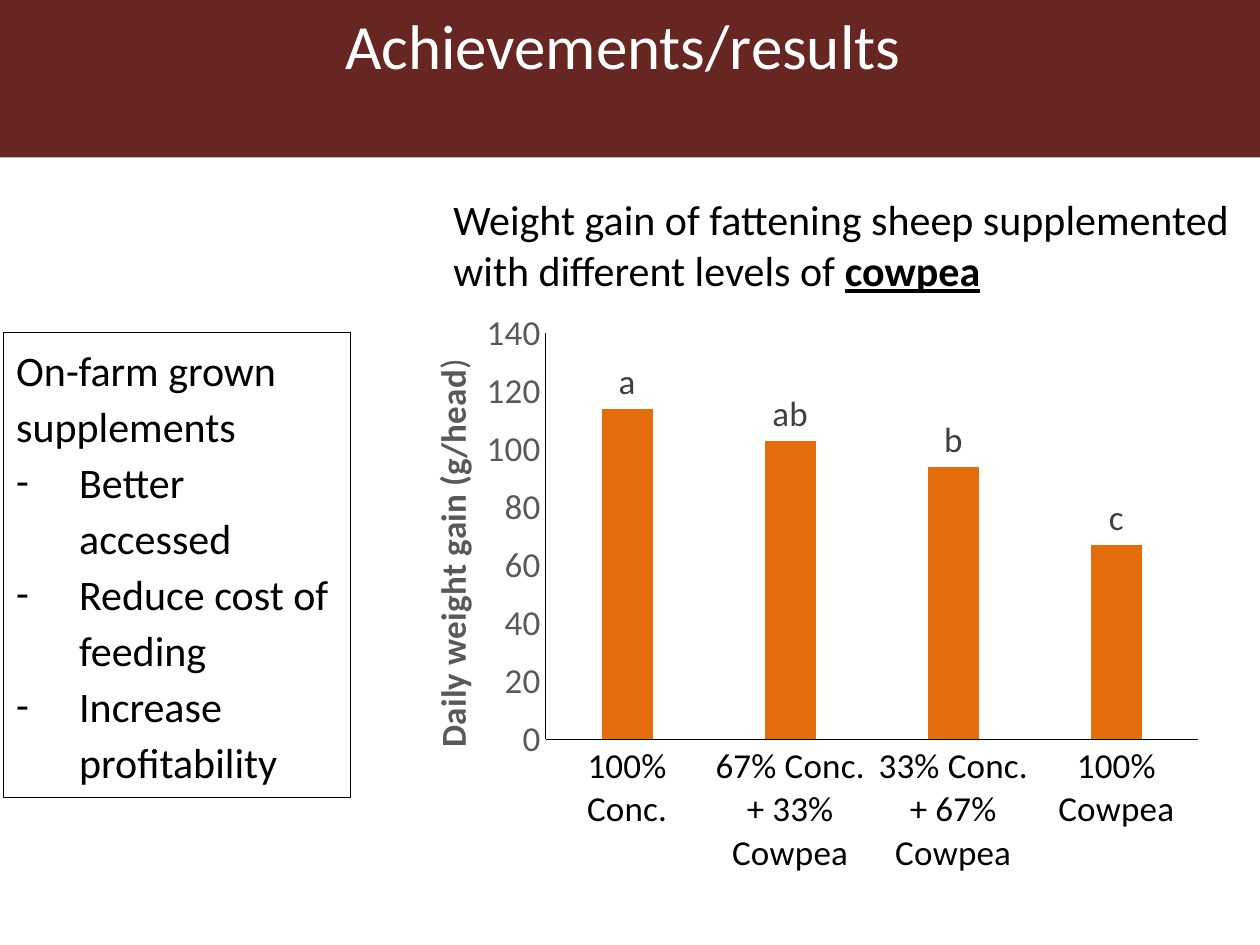
from lxml import etree
from pptx import Presentation
from pptx.chart.data import CategoryChartData as Data
from pptx.dml.color import RGBColor as RGB
from pptx.enum.chart import XL_CHART_TYPE as Kind, XL_LABEL_POSITION as Spot, XL_TICK_MARK as Tick
from pptx.enum.shapes import MSO_SHAPE as Shape
from pptx.enum.text import MSO_ANCHOR as Anchor, MSO_AUTO_SIZE as Fit, PP_ALIGN as Align
from pptx.oxml import parse_xml
from pptx.oxml.ns import nsdecls, qn
from pptx.util import Inches, Pt

MAROON = RGB(0x68, 0x26, 0x22)
ORANGE = RGB(0xE4, 0x6C, 0x0A)
WHITE = RGB(0xFF, 0xFF, 0xFF)
BLACK = RGB(0, 0, 0)
GREY = RGB(0x59, 0x59, 0x59)
DARK = RGB(0x40, 0x40, 0x40)


def style(font, size, color, bold=False):
    font.name, font.size, font.bold = "Calibri", Pt(size), bold
    font.color.rgb = color


def place(part, index, **rules):
    """Give a chart part a manual layout, in shares of the chart."""
    for old in part.findall(qn("c:layout")):
        part.remove(old)
    layout = parse_xml(f"<c:layout {nsdecls('c')}><c:manualLayout/></c:layout>")
    for tag, value in rules.items():
        etree.SubElement(layout[0], qn(f"c:{tag}")).set("val", str(value))
    part.insert(index, layout)


deck = Presentation()
deck.slide_width, deck.slide_height = Inches(10), Inches(7.5)
wide, high = deck.slide_width, deck.slide_height
slide = deck.slides.add_slide(deck.slide_layouts[6])
shapes = slide.shapes

# Title band, one sixth of the slide high
band = shapes.add_shape(Shape.RECTANGLE, 0, 0, wide, high // 6)
band.shadow.inherit = False
band.fill.solid()
band.fill.fore_color.rgb = MAROON
band.line.fill.background()

title = shapes.add_textbox(wide // 20, 0, wide * 9 // 10, high // 6)
frame = title.text_frame
frame.word_wrap = True
frame.text = "Achievements/results "
frame.paragraphs[0].alignment = Align.CENTER
style(frame.paragraphs[0].runs[0].font, 36, WHITE)

# Column chart
data = Data()
data.categories = ["100% Conc.", "67% Conc.+ 33% Cowpea",
                   "33% Conc. + 67% Cowpea", "100% Cowpea"]
data.add_series("Series 1", (114, 103, 94, 67))
chart = shapes.add_chart(Kind.COLUMN_CLUSTERED, Inches(3.08), Inches(2.42),
                         Inches(6.58), Inches(5), data).chart
chart.has_title = chart.has_legend = False
style(chart.font, 20, BLACK)

for axis, color in ((chart.category_axis, BLACK), (chart.value_axis, GREY)):
    axis.major_tick_mark = axis.minor_tick_mark = Tick.NONE
    axis.has_major_gridlines = False
    style(axis.tick_labels.font, 20, color)
    axis.format.line.color.rgb = BLACK
    axis.format.line.width = Pt(0.75)

scale = chart.value_axis
scale.minimum_scale, scale.maximum_scale, scale.major_unit = 0, 140, 20
head = scale.axis_title.text_frame.paragraphs[0]
for text, bold in (("Daily weight gain (g/head", True), (")", False)):
    run = head.add_run()
    run.text = text
    style(run.font, 20, GREY, bold)

plot = chart.plots[0]
plot.gap_width, plot.overlap, plot.vary_by_categories = 219, -27, False
bars = plot.series[0]
bars.format.fill.solid()
bars.format.fill.fore_color.rgb = ORANGE
for i, mark in enumerate(("a", "ab", "b", "c")):
    label = bars.points[i].data_label
    label.text_frame.text = mark
    label.position = Spot.OUTSIDE_END
    style(label.text_frame.paragraphs[0].runs[0].font, 20, DARK)

area = chart.element.find(".//" + qn("c:plotArea"))
place(area, 0, layoutTarget="inner", xMode="edge", yMode="edge",
      x=0.19, y=0.045, w=0.787, h=0.645)
place(area.find(".//" + qn("c:title")), 1, xMode="edge", yMode="edge",
      x=0.045, y=0.08)

# Chart heading
note = shapes.add_textbox(Inches(3.5), Inches(1.49), Inches(6.92), Inches(0.91))
frame = note.text_frame
frame.word_wrap = True
frame.auto_size = Fit.SHAPE_TO_FIT_TEXT
for text, strong in (
        ("Weight gain of fattening sheep supplemented with different levels of ", False),
        ("cowpea", True)):
    run = frame.paragraphs[0].add_run()
    run.text = text
    style(run.font, 24, BLACK, strong)
    run.font.underline = strong

# Boxed list of benefits
box = shapes.add_shape(Shape.RECTANGLE, Inches(0.03), Inches(2.64),
                       Inches(2.75), Inches(3.69))
box.shadow.inherit = False
box.fill.background()
box.line.color.rgb = BLACK
box.line.width = Pt(0.75)
frame = box.text_frame
frame.word_wrap = True
frame.auto_size = Fit.SHAPE_TO_FIT_TEXT
frame.vertical_anchor = Anchor.TOP
lines = ["On-farm grown supplements", "Better accessed",
         "Reduce cost of feeding", "Increase profitability"]
frame.text = "\n".join(lines)
for i, para in enumerate(frame.paragraphs):
    para.alignment = Align.LEFT
    para.line_spacing = Pt(32)
    if i:
        props = para._p.get_or_add_pPr()
        props.set("marL", str(Inches(0.5)))
        props.set("indent", str(-Inches(0.5)))
        etree.SubElement(props, qn("a:buFont")).set("typeface", "Calibri")
        etree.SubElement(props, qn("a:buChar")).set("char", "-")
    style(para.runs[0].font, 24, BLACK)

deck.save("out.pptx")
